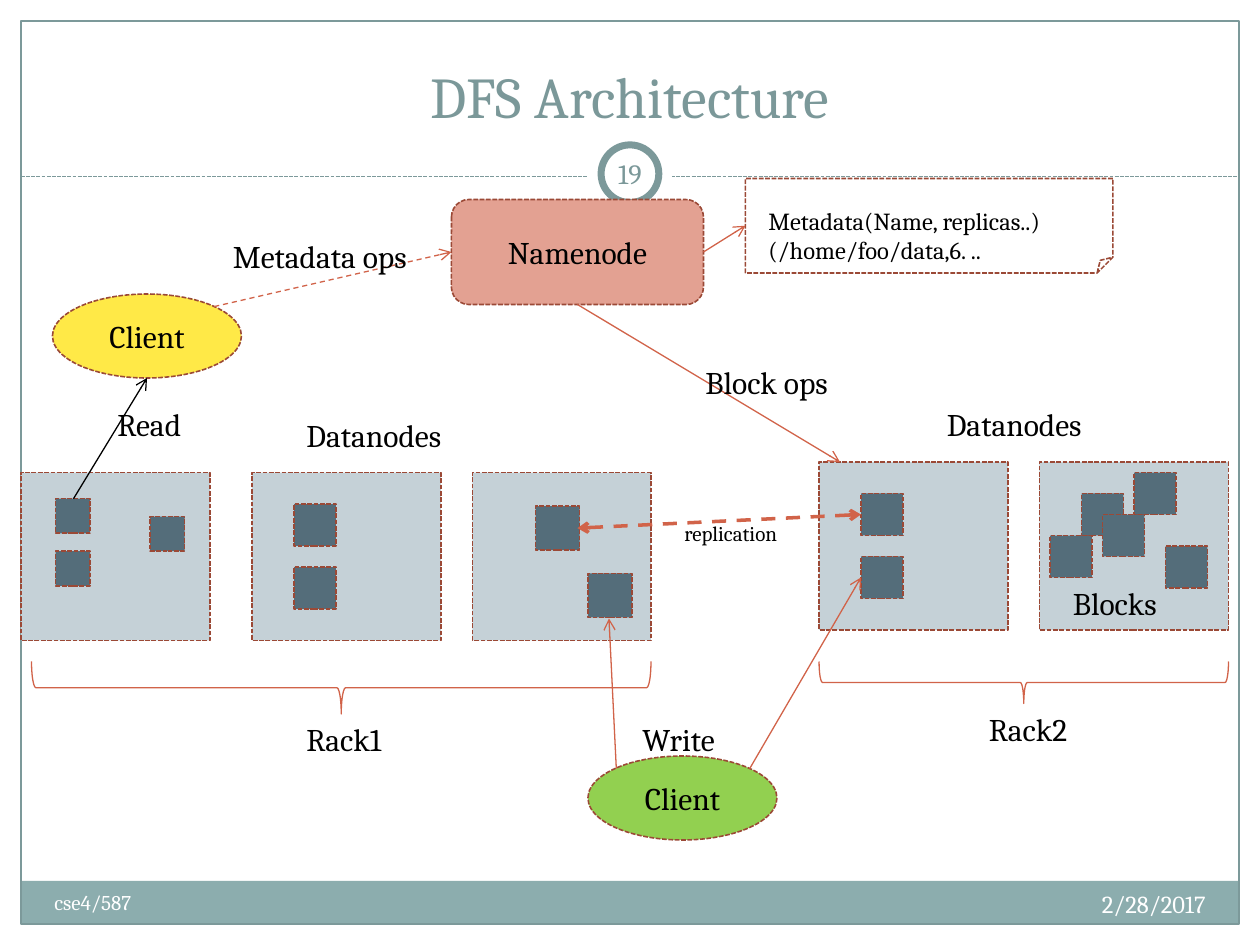
from lxml import etree
from pptx import Presentation
from pptx.dml.color import RGBColor
from pptx.enum.dml import MSO_LINE
from pptx.enum.shapes import MSO_CONNECTOR, MSO_SHAPE
from pptx.enum.text import MSO_ANCHOR, PP_ALIGN
from pptx.oxml.ns import qn
from pptx.util import Inches, Pt

RECT, ROUNDED = MSO_SHAPE.RECTANGLE, MSO_SHAPE.ROUNDED_RECTANGLE
OVAL, NOTE, BRACE = MSO_SHAPE.OVAL, MSO_SHAPE.FOLDED_CORNER, MSO_SHAPE.RIGHT_BRACE
STRAIGHT = MSO_CONNECTOR.STRAIGHT
DOTTED, DASHED = MSO_LINE.SQUARE_DOT, MSO_LINE.DASH
LEFT, CENTER, RIGHT = PP_ALIGN.LEFT, PP_ALIGN.CENTER, PP_ALIGN.RIGHT
TOP, MIDDLE, BOTTOM = MSO_ANCHOR.TOP, MSO_ANCHOR.MIDDLE, MSO_ANCHOR.BOTTOM

FONT = "Cambria"
COLUMNS, ROWS = 120, 90  # the grid has twelve cells to the inch
TEAL, TITLE_TEAL, BAND = "7C999A", "7B9899", "8CADAE"
RUST, ORANGE, SALMON = "9B4936", "D16349", "E3A192"
NODE_GREY, BLOCK_BLUE = "C5D1D7", "546D7A"
YELLOW, GREEN, WHITE, BLACK = "FFE947", "92D050", "FFFFFF", "000000"


def cells(*counts):
    return [Inches(count / 12) for count in counts]


def color(hex_code):
    return RGBColor.from_string(hex_code)


def style_line(line, hex_code, weight, dash=None):
    line.color.rgb = color(hex_code)
    line.width = Pt(weight)
    if dash is not None:
        line.dash_style = dash


def write(frame, text, size, hex_code=BLACK, align=CENTER, anchor=MIDDLE):
    frame.text = text
    frame.vertical_anchor = anchor
    for paragraph in frame.paragraphs:
        paragraph.alignment = align
        for run in paragraph.runs:
            run.font.name = FONT
            run.font.size = Pt(size)
            run.font.color.rgb = color(hex_code)


def add_figure(slide, kind, box, fill=None, line=RUST, weight=0.9, dash=DOTTED):
    figure = slide.shapes.add_shape(kind, *cells(*box))
    figure.shadow.inherit = False
    if fill:
        figure.fill.solid()
        figure.fill.fore_color.rgb = color(fill)
    else:
        figure.fill.background()
    if line:
        style_line(figure.line, line, weight, dash)
    else:
        figure.line.fill.background()
    return figure


def add_actor(slide, kind, box, fill, name):
    write(add_figure(slide, kind, box, fill).text_frame, name, 18)


def add_text(slide, box, text, size, hex_code=BLACK, align=LEFT, anchor=TOP, wrap=True):
    frame = slide.shapes.add_textbox(*cells(*box)).text_frame
    frame.word_wrap = wrap
    write(frame, text, size, hex_code, align, anchor)
    return frame


def add_line(slide, start, end, hex_code=ORANGE, weight=0.75, dash=None, arrows=("tailEnd",)):
    """Draw a line; tailEnd puts an arrowhead at its end, headEnd at its start."""
    connector = slide.shapes.add_connector(STRAIGHT, *cells(*start, *end))
    style_line(connector.line, hex_code, weight, dash)
    properties = connector._element.spPr
    for arrow in arrows:
        etree.SubElement(properties.find(qn("a:ln")), qn("a:" + arrow), type="arrow")
    etree.SubElement(properties, qn("a:effectLst"))


def add_datanode(slide, box, blocks, side=4):
    """Draw a node and its blocks, whose corners are offsets from the node's corner."""
    add_figure(slide, RECT, box, NODE_GREY)
    for column, row in blocks:
        add_figure(slide, RECT, (box[0] + column, box[1] + row, side, side), BLOCK_BLUE)


def add_brace(slide, left, top, width, depth):
    """Draw a brace that opens upward: a right brace turned by 90 degrees."""
    turned = (left + (width - depth) / 2, top - (width - depth) / 2, depth, width)
    brace = add_figure(slide, BRACE, turned, None, ORANGE, 0.75, None)
    brace.rotation = 90
    brace.adjustments[0] = 0.083


def add_page_frame(slide):
    margin = 2
    inner_width = COLUMNS - 2 * margin
    add_figure(slide, RECT, (margin, 83.9, inner_width, 4.1), BAND, None)
    add_figure(slide, RECT, (margin, margin, inner_width, ROWS - 2 * margin), None, TEAL, 0.75, None)
    add_line(slide, (margin, 16.8), (COLUMNS - margin, 16.8), TEAL, 0.75, DOTTED, ())
    add_figure(slide, OVAL, (56, 12.6, 8, 8), WHITE, None)
    add_figure(slide, OVAL, (57.25, 13.8, 5.5, 5.5), WHITE, TEAL, 4, None)
    add_text(slide, (4, 3, 112, 10), "DFS Architecture", 33, TITLE_TEAL, CENTER, BOTTOM)
    number = add_text(slide, (57, 13.6, 6, 5.8), "19", 16, TITLE_TEAL, CENTER, MIDDLE)
    number.margin_left = number.margin_right = Inches(0.05)
    add_text(slide, (4, 84.1, 47, 4.8), "cse4/587", 12, WHITE)
    add_text(slide, (76, 84.1, 40, 4.8), "2/28/2017", 14, WHITE, RIGHT)


def add_racks(slide):
    datanodes = [
        ((2, 45, 18, 16), [(3.3, 2.5), (3.3, 7.5), (12.3, 4.2)], 3.3),
        ((24, 45, 18, 16), [(4, 3), (4, 9)], 4),
        ((45, 45, 17, 16), [(6, 3.2), (11, 9.6)], 4.2),
        ((78, 44, 18, 16), [(4, 3), (4, 9)], 4),
        ((99, 44, 18, 16), [(4, 3), (1, 7), (6, 5), (12, 8), (9, 1)], 4),
    ]
    for box, blocks, side in datanodes:
        add_datanode(slide, box, blocks, side)
    add_brace(slide, 3, 63, 59, 5)
    add_brace(slide, 78, 63, 39, 4)


def add_arrows(slide):
    add_line(slide, (55, 50.3), (82, 49), weight=2, dash=DASHED, arrows=("headEnd", "tailEnd"))
    add_line(slide, (58.7, 73.2), (58, 58.9))
    add_line(slide, (71.4, 73.2), (82, 55))
    add_line(slide, (7, 47.5), (14, 36), BLACK)
    add_line(slide, (20.4, 29.2), (43, 24), dash=DASHED)
    add_line(slide, (67, 24), (71, 21.5))
    add_line(slide, (55, 29), (80, 44))


def add_labels(slide):
    labels = [
        (28, 68, 10.3, "Rack1"), (93, 67, 10.8, "Rack2"),
        (101, 55, 11.2, "Blocks"), (28, 39, 16.8, "Datanodes"),
        (89, 38, 16.8, "Datanodes"), (60, 68, 10.1, "Write"),
        (10, 38, 9.4, "Read"), (21, 22, 20.6, "Metadata ops"),
        (66, 34, 15.2, "Block ops"),
    ]
    for left, top, width, label in labels:
        add_text(slide, (left, top, width, 4.8), label, 18, wrap=False)
    add_text(slide, (64, 49, 12, 3.6), "replication", 12, wrap=False)
    metadata = "Metadata(Name, replicas..)\n(/home/foo/data,6. .."
    add_text(slide, (72, 19, 30.7, 6.8), metadata, 14, wrap=False)


def main():
    deck = Presentation()
    deck.slide_width, deck.slide_height = cells(COLUMNS, ROWS)
    slide = deck.slides.add_slide(deck.slide_layouts[6])
    add_page_frame(slide)
    add_actor(slide, ROUNDED, (43, 19, 24, 10), SALMON, "Namenode")
    add_racks(slide)
    add_actor(slide, OVAL, (56, 72, 18, 8), GREEN, "Client")
    add_actor(slide, OVAL, (5, 28, 18, 8), YELLOW, "Client")
    add_figure(slide, NOTE, (71, 17, 35, 9))
    add_arrows(slide)
    add_labels(slide)
    deck.save("out.pptx")


if __name__ == "__main__":
    main()
